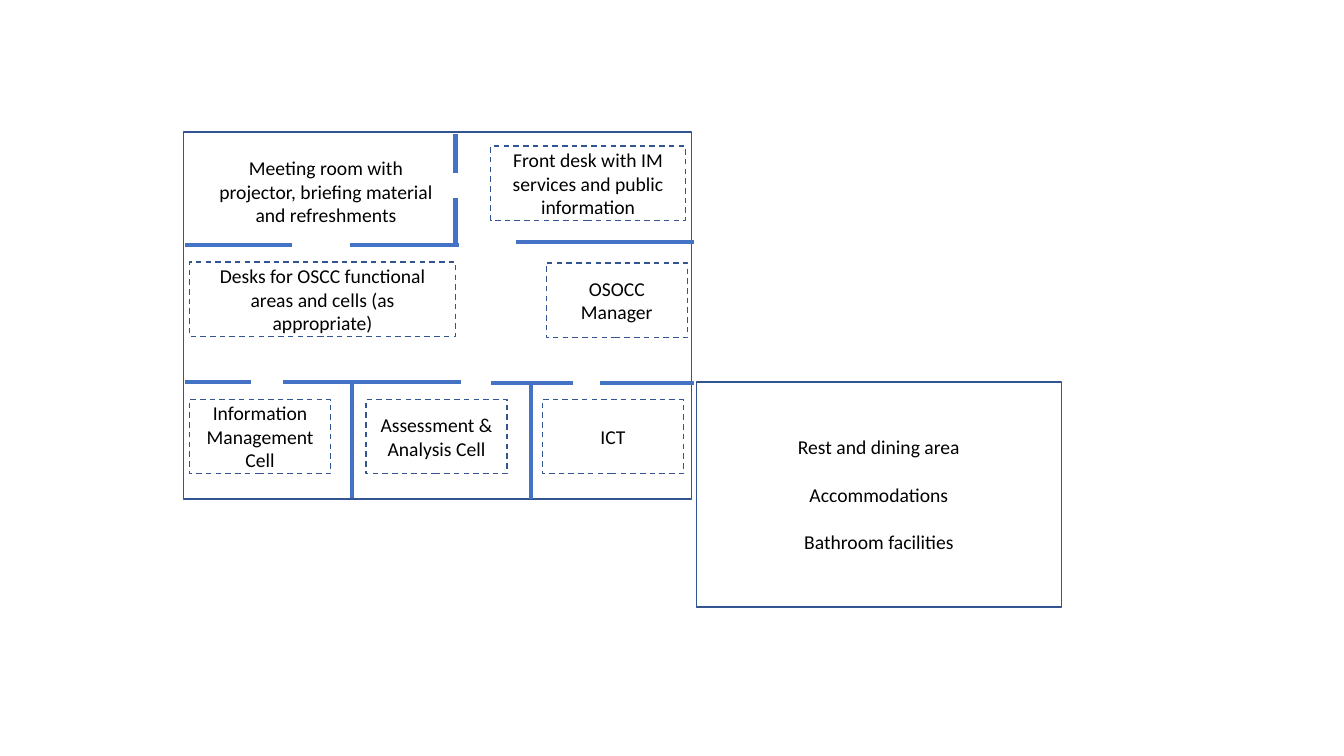
from pptx import Presentation
from pptx.dml.color import RGBColor as RGB
from pptx.enum.dml import MSO_LINE as Dash
from pptx.enum.shapes import MSO_CONNECTOR as Conn, MSO_SHAPE as Shape
from pptx.enum.text import MSO_ANCHOR as Anchor, PP_ALIGN as Align
from pptx.oxml.ns import qn
from pptx.util import Pt
from lxml import etree

THEME = {
    "room": RGB.from_string("FFFFFF"),
    "outline": RGB.from_string("325491"),
    "wall": RGB.from_string("4472C4"),
    "text": RGB.from_string("000000"),
    "font": "Calibri",
    "size": Pt(14),
    "outline_width": Pt(1),
    "wall_width": Pt(3.25),
}

BUILDING = (131, 94.3, 362.9, 262.1)
ANNEX = (497.5, 272.9, 260.6, 160.6)
ANNEX_USES = ["Rest and dining area", "Accommodations", "Bathroom facilities"]
MEETING = (144, 99.4, 177.8, 74.9)
MEETING_USE = ["Meeting room with projector, briefing material and refreshments"]

DESK_H = 53.3
DESKS = [
    (135.4, 187.2, 190, ["Desks for OSCC functional areas and cells (as appropriate)"]),
    (390.2, 187.9, 100.8, ["OSOCC Manager"]),
    (350.6, 104.4, 139, ["Front desk with IM services and public information"]),
]
CELLS = [["Information Management", "Cell"], ["Assessment & Analysis Cell"], ["ICT"]]
CELL_X, CELL_Y, CELL_W, CELL_PITCH = 135.4, 285.2, 100.8, 126

WALLS_ACROSS = {
    172.8: [(368.6, 495.4)],
    175: [(132.5, 208.8), (249.8, 327.6)],
    272.9: [(132.5, 179.3), (202.3, 329)],
    273.6: [(350.6, 409), (428.4, 495.4)],
}
WALLS_DOWN = {
    325.4: [(95.8, 123.8), (141.1, 175)],
    251.3: [(273.6, 355.7)],
    379.4: [(272.9, 356.4)],
}


def add_room(box, lines=(), dash=None, outlined=True, gap=0):
    sp = s.shapes.add_shape(Shape.RECTANGLE, *map(Pt, box))
    sp.shadow.inherit = False
    sp.fill.solid()
    sp.fill.fore_color.rgb = THEME["room"]
    if outlined:
        sp.line.color.rgb = THEME["outline"]
        sp.line.width = THEME["outline_width"]
        if dash:
            sp.line.dash_style = dash
    else:
        sp.line.fill.background()
    tf = sp.text_frame
    tf.word_wrap = True
    tf.vertical_anchor = Anchor.MIDDLE
    for i, line in enumerate(lines):
        p = tf.add_paragraph() if i else tf.paragraphs[0]
        p.alignment = Align.CENTER
        p.space_before = Pt(gap if i else 0)
        r = p.add_run()
        r.text = line
        for name, value in {"name": THEME["font"], "size": THEME["size"]}.items():
            setattr(r.font, name, value)
        r.font.color.rgb = THEME["text"]


def add_wall(x1, y1, x2, y2):
    wall = s.shapes.add_connector(Conn.STRAIGHT, *map(Pt, (x1, y1, x2, y2)))
    wall.line.color.rgb = THEME["wall"]
    wall.line.width = THEME["wall_width"]
    etree.SubElement(wall.element.spPr, qn("a:effectLst"))


prs = Presentation()
prs.slide_width, prs.slide_height = Pt(960), Pt(540)
s = prs.slides.add_slide(prs.slide_layouts[6])

add_room(BUILDING)
add_room(MEETING, MEETING_USE, outlined=False)
for x, y, w, lines in DESKS:
    add_room((x, y, w, DESK_H), lines, Dash.DASH)
for i, lines in enumerate(CELLS):
    add_room((CELL_X + i * CELL_PITCH, CELL_Y, CELL_W, DESK_H), lines, Dash.DASH)
add_room(ANNEX, ANNEX_USES, gap=17)

for y, spans in WALLS_ACROSS.items():
    for start, end in spans:
        add_wall(start, y, end, y)
for x, spans in WALLS_DOWN.items():
    for start, end in spans:
        add_wall(x, start, x, end)

prs.save("out.pptx")
